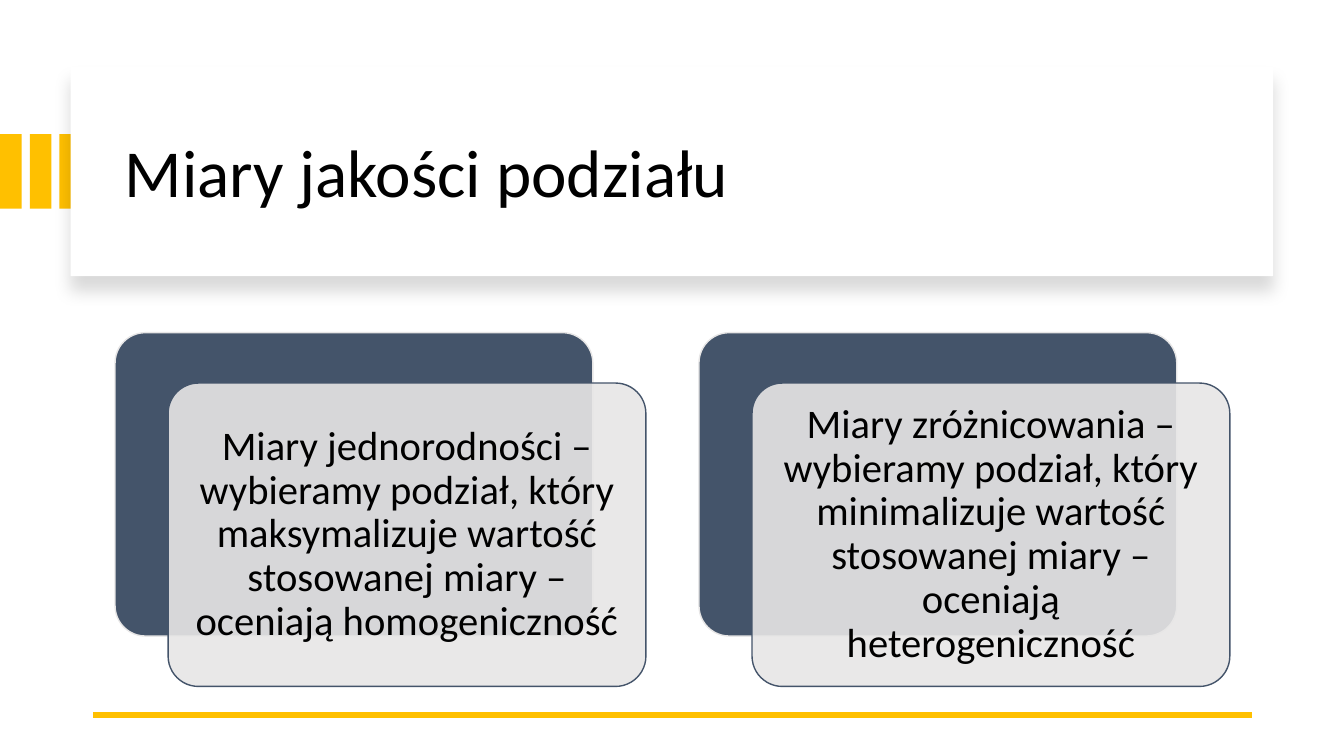
from lxml import etree
from pptx import Presentation, util as u
from pptx.dml.color import RGBColor
from pptx.enum import shapes, text
from pptx.oxml import ns

GOLD, NAVY, SILVER, WHITE, BLACK = "FFC000", "44546A", "E7E6E6", "FFFFFF", "000000"


def colour(hex_code):
    return RGBColor.from_string(hex_code)


def add_xml(parent, tag, **attributes):
    values = {name: str(value) for name, value in attributes.items()}
    return etree.SubElement(parent, ns.qn(tag), values)


class Deck:
    font = "Calibri"

    def __init__(self, width, height):
        self.prs = Presentation()
        self.prs.slide_width, self.prs.slide_height = u.Pt(width), u.Pt(height)
        self.slide = self.prs.slides.add_slide(self.prs.slide_layouts[6])

    def group(self):
        return self.slide.shapes.add_group_shape().shapes

    def box(self, parent, place, fill, line=None, radius=None, opacity=None):
        kind = shapes.MSO_SHAPE.RECTANGLE if radius is None else shapes.MSO_SHAPE.ROUNDED_RECTANGLE
        box = parent.add_shape(kind, *map(u.Pt, place))
        box.shadow.inherit = False
        box.fill.solid()
        box.fill.fore_color.rgb = colour(fill)
        if radius is not None:
            box.adjustments[0] = radius
        if line:
            box.line.color.rgb = colour(line)
            box.line.width = u.Pt(1)
        else:
            box.line.fill.background()
        if opacity:
            tint = box._element.spPr.find(ns.qn("a:solidFill"))[0]
            add_xml(tint, "a:alpha", val=opacity * 1000)
        return box

    def drop_shadow(self, box, opacity, blur, distance):
        """Cast a soft black shadow straight down."""
        effects = box._element.spPr.find(ns.qn("a:effectLst"))
        shadow = add_xml(effects, "a:outerShdw", blurRad=u.Pt(blur), dist=u.Pt(distance),
                         dir=90 * 60000, algn="t", rotWithShape=0)
        add_xml(add_xml(shadow, "a:srgbClr", val=BLACK), "a:alpha", val=opacity * 1000)

    def words(self, parent, place, wording, size, align, **margins):
        frame = parent.add_textbox(*map(u.Pt, place)).text_frame
        layout = {"word_wrap": True, "vertical_anchor": text.MSO_ANCHOR.MIDDLE}
        layout.update({name: u.Pt(gap) for name, gap in margins.items()})
        paragraph = frame.paragraphs[0]
        run = paragraph.add_run()
        run.text = wording
        for target, values in (
            (frame, layout),
            (paragraph, {"alignment": align, "line_spacing": 0.9}),
            (run.font, {"name": self.font, "size": u.Pt(size)}),
        ):
            for name, value in values.items():
                setattr(target, name, value)
        run.font.color.rgb = colour(BLACK)

    def rule(self, start, end, hue, width):
        rule = self.slide.shapes.add_connector(
            shapes.MSO_CONNECTOR.STRAIGHT, *map(u.Pt, start + end))
        rule.line.color.rgb = colour(hue)
        rule.line.width = u.Pt(width)
        add_xml(rule._element.spPr, "a:effectLst")

    def measure_card(self, left, top, wording):
        """Draw a dark card with a translucent card, holding the wording, in front."""
        card = self.group()
        width, height, inset = 341.3, 216.7, 6.4
        front_left, front_top = left + 37.9, top + 36
        self.box(card, (left, top, width, height), NAVY, SILVER, 0.1)
        self.box(card, (front_left, front_top, width, height), SILVER, NAVY, 0.1, 90)
        sides = ("left", "top", "right", "bottom")
        self.words(card, (front_left + inset, front_top + inset,
                          width - 2 * inset, height - 2 * inset),
                   wording, 29, text.PP_ALIGN.CENTER,
                   **{f"margin_{side}": 8.7 for side in sides})


def main():
    deck = Deck(960, 540)
    stripes = deck.group()
    for index in range(3):
        deck.box(stripes, (index * 21.25, 95.8, 15.4, 53.3), GOLD)

    banner = deck.box(deck.slide.shapes, (50.5, 48, 859, 149.3), WHITE)
    deck.drop_shadow(banner, opacity=15, blur=11, distance=10)
    deck.words(deck.slide.shapes, (82.2, 64, 801.4, 122.4), "Miary jakości podziału",
               48, text.PP_ALIGN.LEFT)
    deck.rule((894.2, 510.5), (66.2, 510.5), GOLD, 4.5)

    measures = (
        "Miary jednorodności – wybieramy podział, który maksymalizuje wartość "
        "stosowanej miary – oceniają homogeniczność",
        "Miary zróżnicowania – wybieramy podział, który minimalizuje wartość "
        "stosowanej miary – oceniają heterogeniczność",
    )
    for index, measure in enumerate(measures):
        deck.measure_card(82.2 + index * 417.1, 237.6, measure)

    deck.prs.save("out.pptx")


if __name__ == "__main__":
    main()
